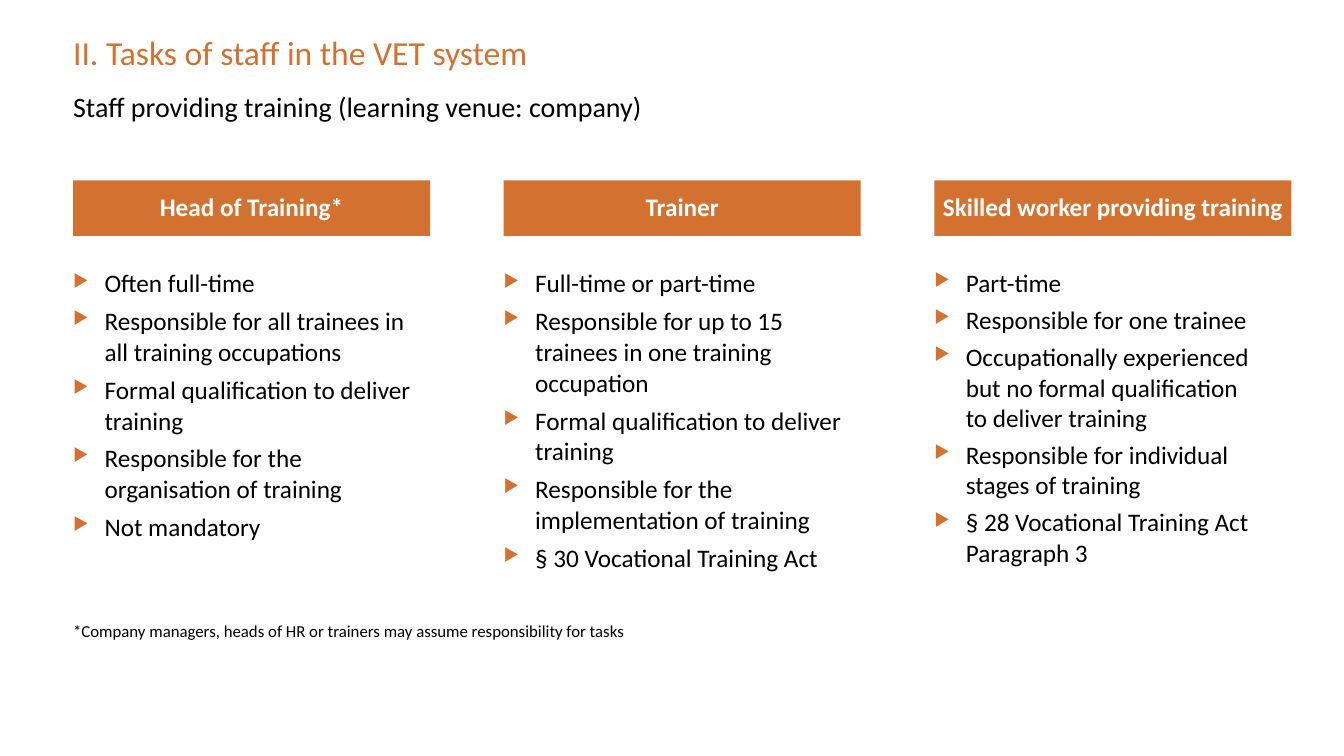
from lxml import etree
from pptx import Presentation
from pptx import util as u
from pptx.dml.color import RGBColor
from pptx.enum import shapes, text
from pptx.oxml.ns import qn

ORANGE, BLACK, WHITE = "D37230", "000000", "FFFFFF"
LEFT, PITCH, COLUMN_WIDTH = 52.2, 307.6, 255

COLUMNS = [
    ("Head of Training*", u.Pt(22), [
        "Often full-time",
        "Responsible for all trainees in all training occupations",
        "Formal qualification to deliver training",
        "Responsible for the organisation of training",
        "Not mandatory",
    ]),
    ("Trainer", u.Pt(22), [
        "Full-time or part-time",
        "Responsible for up to 15 trainees in one training occupation",
        "Formal qualification to deliver training",
        "Responsible for the implementation of training",
        "§ 30 Vocational Training Act",
    ]),
    ("Skilled worker providing training", 1.0, [
        "Part-time",
        "Responsible for one trainee",
        "Occupationally experienced \nbut no formal qualification \nto deliver training",
        "Responsible for individual stages of training",
        "§ 28 Vocational Training Act Paragraph 3",
    ]),
]


def write(shape, lines, size, color, bold=False, anchor=text.MSO_ANCHOR.TOP,
          align=text.PP_ALIGN.LEFT, spacing=1.0, bullet=False):
    """Fill the shape with one paragraph per line, without margins."""
    frame = shape.text_frame
    frame_format = {"margin_left": 0, "margin_top": 0, "margin_right": 0,
                    "margin_bottom": 0, "word_wrap": True, "vertical_anchor": anchor,
                    "auto_size": text.MSO_AUTO_SIZE.NONE}
    for name, value in frame_format.items():
        setattr(frame, name, value)
    for index, line in enumerate(lines):
        paragraph = frame.add_paragraph() if index else frame.paragraphs[0]
        paragraph.text = line
        paragraph.alignment = align
        paragraph.line_spacing = spacing
        paragraph.space_before = u.Pt(5 if index else 0)
        if bullet:
            properties = paragraph._p.get_or_add_pPr()
            properties.set("marL", str(u.Pt(22.5)))
            properties.set("indent", str(-u.Pt(22.5)))
            bullet_color = etree.SubElement(properties, qn("a:buClr"))
            etree.SubElement(bullet_color, qn("a:srgbClr"), val=ORANGE)
            etree.SubElement(properties, qn("a:buSzPct"), val="70000")
            etree.SubElement(properties, qn("a:buChar"), char="▶")
        for name, value in {"name": "Calibri", "size": u.Pt(size), "bold": bold}.items():
            setattr(paragraph.font, name, value)
        paragraph.font.color.rgb = RGBColor.from_string(color)


def box(left, top, width, height):
    return [u.Pt(value) for value in (left, top, width, height)]


presentation = Presentation()
presentation.slide_width, presentation.slide_height = u.Pt(960), u.Pt(540)
slide = presentation.slides.add_slide(presentation.slide_layouts[5])

title = slide.shapes.title
title.left, title.top, title.width, title.height = box(LEFT, 23, 708.5, 35.3)
write(title, ["II. Tasks of staff in the VET system"], 24, ORANGE)

subtitle = slide.shapes.add_textbox(*box(LEFT, 64, 870.5, 19.5))
write(subtitle, ["Staff providing training (learning venue: company)"], 20, BLACK)

for column, (heading, spacing, tasks) in enumerate(COLUMNS):
    left = LEFT + column * PITCH
    header = slide.shapes.add_shape(shapes.MSO_SHAPE.RECTANGLE,
                                    *box(left, 128.9, COLUMN_WIDTH, 39.6))
    header.shadow.inherit = False
    header.fill.solid()
    header.fill.fore_color.rgb = RGBColor.from_string(ORANGE)
    header.line.fill.background()
    write(header, [heading], 18, WHITE, bold=True, anchor=text.MSO_ANCHOR.MIDDLE,
          align=text.PP_ALIGN.CENTER, spacing=0.9)
    task_list = slide.shapes.add_textbox(*box(left, 190.8, COLUMN_WIDTH, 229.7))
    write(task_list, tasks, 18, BLACK, spacing=spacing, bullet=True)

footnote = slide.shapes.add_textbox(*box(LEFT, 443.5, 677.5, 14.5))
write(footnote, ["*Company managers, heads of HR or trainers may assume responsibility for tasks"],
      12, BLACK)

presentation.save("out.pptx")
